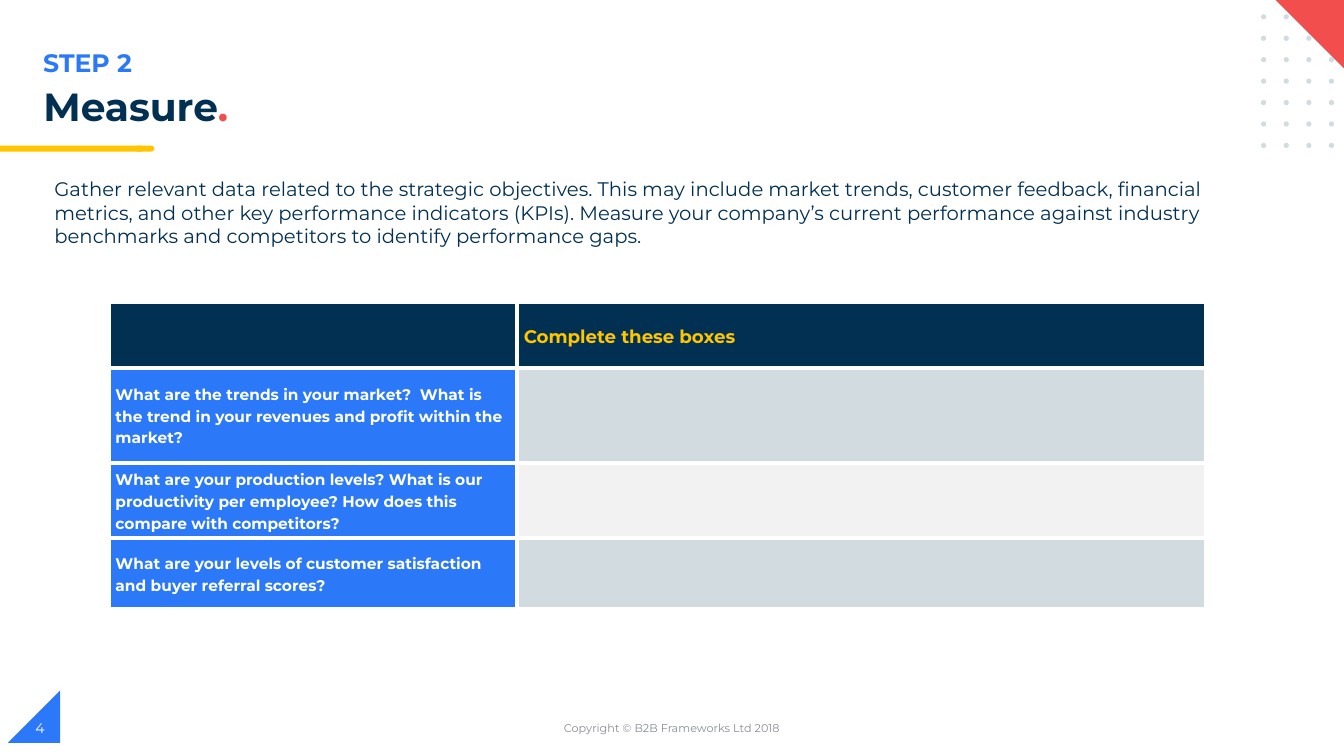
from itertools import product

from lxml.etree import SubElement
from pptx import Presentation
from pptx.dml.color import RGBColor
from pptx.enum.shapes import MSO_SHAPE as Shape
from pptx.enum.text import MSO_ANCHOR as Anchor, MSO_AUTO_SIZE as AutoSize, PP_ALIGN as Align
from pptx.oxml.ns import qn
from pptx.util import Cm, Pt

FONT = "Montserrat"
COLOURS = {
    "navy": "023053", "blue": "2B79F8", "yellow": "FFC600", "red": "F24E4E",
    "mist": "D1DBE0", "pale": "F2F2F2", "grey": "888C97", "white": "FFFFFF",
}
INTRO = (
    "Gather relevant data related to the strategic objectives. This may include market trends, "
    "customer feedback, financial metrics, and other key performance indicators (KPIs). Measure "
    "your company’s current performance against industry benchmarks and competitors to identify "
    "performance gaps."
)
# Row height in cm, then (text, fill) for each column
ROWS = [
    (1.65, ("", "navy"), ("Complete these boxes", "navy")),
    (2.39, ("What are the trends in your market?  What is the trend in your revenues "
            "and profit within the market?", "blue"), ("", "mist")),
    (1.9, ("What are your production levels? What is our productivity per employee? "
           "How does this compare with competitors?", "blue"), ("", "pale")),
    (1.78, ("What are your levels of customer satisfaction and buyer referral scores?",
            "blue"), ("", "mist")),
]
COLUMN_WIDTHS = (10.29, 17.37)


def colour(name):
    return RGBColor.from_string(COLOURS[name])


def write(para, text, size=14, tint="navy", bold=False):
    span = para.add_run()
    span.text = text
    span.font.name = FONT
    span.font.size = Pt(size)
    span.font.bold = bold
    span.font.color.rgb = colour(tint)


def add_text(page, text, place, anchor=Anchor.TOP, align=Align.LEFT, fit=AutoSize.NONE, **style):
    frame = page.shapes.add_textbox(*map(Cm, place)).text_frame
    frame.word_wrap = True
    frame.auto_size = fit
    frame.vertical_anchor = anchor
    frame.paragraphs[0].alignment = align
    write(frame.paragraphs[0], text, **style)


def add_block(page, kind, place, tint):
    block = page.shapes.add_shape(kind, *map(Cm, place))
    block.shadow.inherit = False
    block.fill.solid()
    block.fill.fore_color.rgb = colour(tint)
    block.line.fill.background()
    return block


def add_decoration(page):
    number_corner = add_block(page, Shape.RIGHT_TRIANGLE, (0.2, 17.4, 1.32, 1.32), "blue")
    number_corner.element.spPr.get_or_add_xfrm().set("flipH", "1")
    add_block(page, Shape.FLOWCHART_TERMINATOR, (3.4, 3.67, 0.49, 0.15), "yellow")
    add_block(page, Shape.RECTANGLE, (0, 3.67, 3.58, 0.15), "yellow")
    for row, column in product(range(7), range(4)):
        add_block(page, Shape.OVAL, (31.78 + 0.57 * column, 0.36 + 0.54 * row, 0.13, 0.13), "mist")
    add_block(page, Shape.RIGHT_TRIANGLE, (32.13, -0.02, 1.82, 1.82), "red").rotation = 180


def set_title(page):
    title = page.shapes.title
    title.left, title.top, title.width, title.height = map(Cm, (0.84, 2.08, 28.32, 1.42))
    frame = title.text_frame
    frame.word_wrap = True
    frame.auto_size = AutoSize.NONE
    frame.vertical_anchor = Anchor.TOP
    para = frame.paragraphs[0]
    para.alignment = Align.LEFT
    para.line_spacing = 0.9
    write(para, "Measure", size=28, bold=True)
    write(para, ".", size=28, tint="red", bold=True)


def add_borders(cell, tint, width):
    properties = cell._tc.get_or_add_tcPr()
    for side in ("lnL", "lnR", "lnT", "lnB"):
        line = SubElement(properties, qn(f"a:{side}"), w=str(Pt(width)))
        SubElement(SubElement(line, qn("a:solidFill")), qn("a:srgbClr"), val=COLOURS[tint])


def fill_cell(cell, text, fill, **style):
    add_borders(cell, "white", 3)
    cell.fill.solid()
    cell.fill.fore_color.rgb = colour(fill)
    cell.vertical_anchor = Anchor.MIDDLE
    cell.margin_left = cell.margin_right = Cm(0.17)
    cell.margin_top = cell.margin_bottom = 0
    if text:
        para = cell.text_frame.paragraphs[0]
        para.line_spacing = 1.15
        write(para, text, bold=True, **style)


def add_question_table(page):
    heights = [height for height, *_ in ROWS]
    table = page.shapes.add_table(
        len(ROWS), len(COLUMN_WIDTHS), Cm(2.74), Cm(7.62),
        Cm(sum(COLUMN_WIDTHS)), Cm(sum(heights))).table
    table.first_row = table.horz_banding = False
    for column, width in zip(table.columns, COLUMN_WIDTHS):
        column.width = Cm(width)
    for index, (height, *cells) in enumerate(ROWS):
        table.rows[index].height = Cm(height)
        style = {"size": 11, "tint": "white"} if index else {"size": 13, "tint": "yellow"}
        for cell, (text, fill) in zip(table.rows[index].cells, cells):
            fill_cell(cell, text, fill, **style)


def main():
    deck = Presentation()
    deck.slide_width, deck.slide_height = Cm(33.87), Cm(19.05)
    page = deck.slides.add_slide(deck.slide_layouts[5])
    add_decoration(page)
    add_text(page, "STEP 2", (0.84, 1.07, 17, 1.02), fit=AutoSize.SHAPE_TO_FIT_TEXT,
             size=18, tint="blue", bold=True)
    set_title(page)
    add_text(page, INTRO, (1.12, 4.34, 30.5, 2.06), fit=AutoSize.SHAPE_TO_FIT_TEXT)
    add_question_table(page)
    add_text(page, "Copyright © B2B Frameworks Ltd 2018", (11.22, 17.83, 11.43, 1.02),
             anchor=Anchor.MIDDLE, align=Align.CENTER, size=8, tint="grey")
    add_text(page, "4", (0.64, 17.83, 7.62, 1.02), anchor=Anchor.MIDDLE, size=10, tint="white")
    deck.save("out.pptx")


if __name__ == "__main__":
    main()
